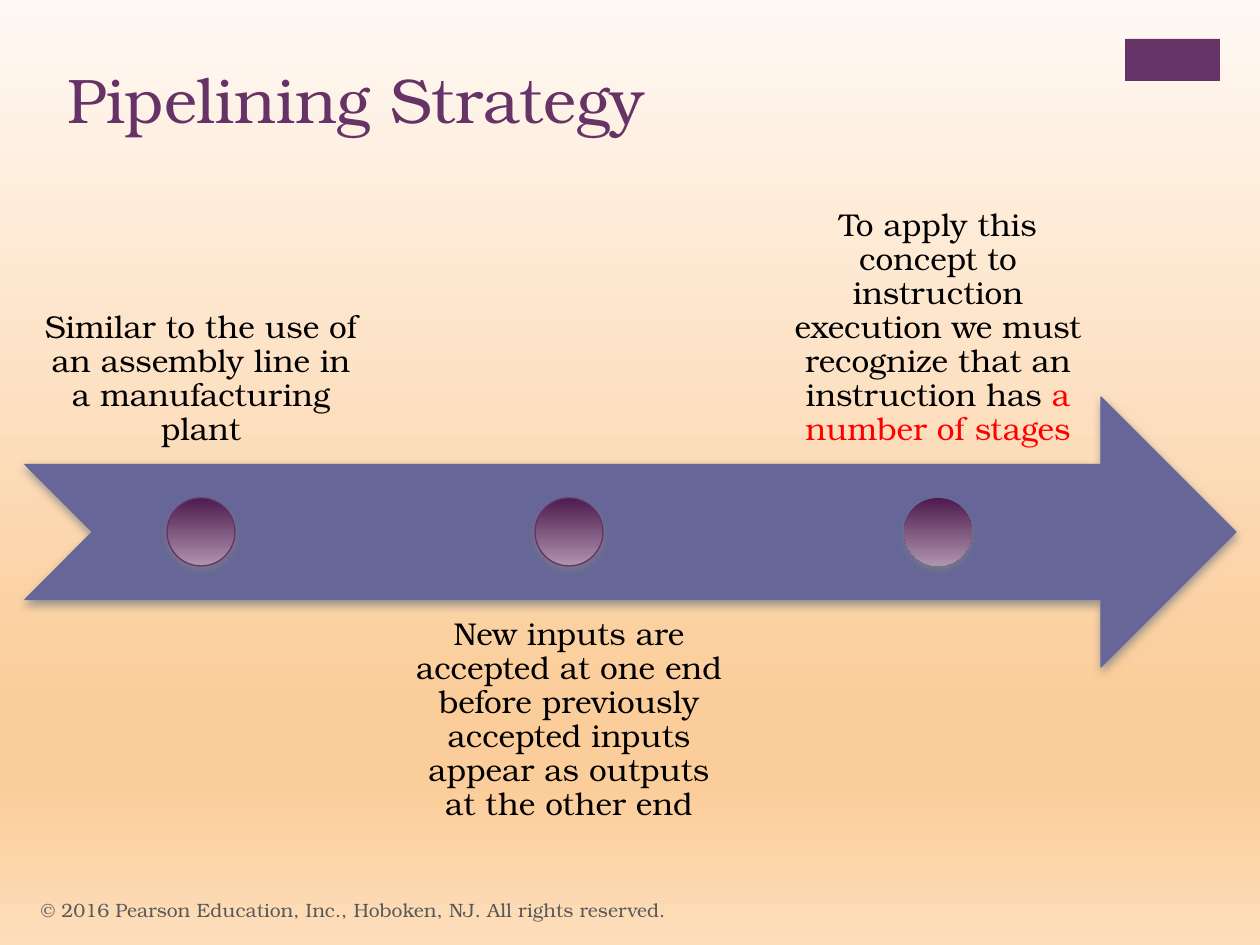
from lxml import etree
from pptx import Presentation
from pptx.dml.color import RGBColor
from pptx.enum.shapes import MSO_SHAPE as SHAPE
from pptx.enum.text import MSO_ANCHOR as ANCHOR, PP_ALIGN as ALIGN
from pptx.oxml.ns import qn
from pptx.util import Pt

PX = 914400 / 126
FONT = "TeX Gyre Bonum"
COLORS = {
    "plum": "663366", "slate": "666699", "shadow": "808080",
    "black": "000000", "red": "FF0000", "gray": "595959",
}
BACKGROUND = [(0, "FFF9F4"), (74, "FBCD9A"), (83, "FBCD9A"), (100, "FDDEBB")]
DOT = [(0, "4D1A4D"), (100, "AF94AF")]

prs = Presentation()
prs.slide_width, prs.slide_height = int(1260 * PX), int(945 * PX)
s = prs.slides.add_slide(prs.slide_layouts[6])


def add_shape(kind, box, fill, line=None, shadow=True):
    sp = s.shapes.add_shape(kind, *[int(v * PX) for v in box])
    sp.shadow.inherit = False
    if isinstance(fill, list):
        set_gradient(sp.fill, sp._element, fill)
    else:
        sp.fill.solid()
        sp.fill.fore_color.rgb = RGBColor.from_string(COLORS[fill])
    if line:
        sp.line.color.rgb = RGBColor.from_string(COLORS[line])
        sp.line.width = Pt(0.75)
    else:
        sp.line.fill.background()
    if shadow:
        effects = sp._element.spPr.find(qn("a:effectLst"))
        outer = etree.SubElement(effects, qn("a:outerShdw"), blurRad=str(Pt(5)),
                                 dist=str(Pt(2)), dir="5400000", rotWithShape="0")
        color = etree.SubElement(outer, qn("a:srgbClr"), val=COLORS["shadow"])
        etree.SubElement(color, qn("a:alpha"), val="75000")


def set_gradient(fill, element, stops):
    fill.gradient()
    fill.gradient_angle = 270
    stop_list = element.find(".//" + qn("a:gsLst"))
    for old in list(stop_list):
        stop_list.remove(old)
    for pos, color in stops:
        gs = etree.SubElement(stop_list, qn("a:gs"), pos=str(pos * 1000))
        etree.SubElement(gs, qn("a:srgbClr"), val=color)


set_gradient(s.background.fill, s._element, BACKGROUND)
add_shape(SHAPE.RECTANGLE, (1125, 39, 95, 42), "plum", shadow=False)
add_shape(SHAPE.NOTCHED_RIGHT_ARROW, (25, 397, 1211, 270), "slate", "slate")

stages = [
    (195, ANCHOR.BOTTOM, "plum", [
        ("Similar to the use of an assembly line in a manufacturing plant", "black")]),
    (600, ANCHOR.TOP, "plum", [
        ("New inputs are accepted at one end before previously accepted inputs "
         "appear as outputs at the other end", "black")]),
    (195, ANCHOR.BOTTOM, None, [
        ("To apply this concept to instruction execution we must recognize that "
         "an instruction has ", "black"),
        ("a number of stages", "red")]),
]
texts = [
    ((54, 55, 1041, 154), ANCHOR.TOP, ALIGN.LEFT, 36, (13, 6), 1,
     [("Pipelining Strategy", "plum")]),
    ((28, 885, 844, 50), ANCHOR.MIDDLE, ALIGN.LEFT, 11, (13, 6), 1,
     [("© 2016 Pearson Education, Inc., Hoboken, NJ. All rights reserved.", "gray")]),
]
for i, (top, anchor, line, runs) in enumerate(stages):
    left = 25 + i * 737 // 2
    add_shape(SHAPE.OVAL, (left + 142, 498, 68, 68), DOT, line)
    texts.append(((left, top, 352, 270), anchor, ALIGN.CENTER, 18, (18, 18), 0.9, runs))

for box, anchor, align, size, (side, edge), spacing, runs in texts:
    tf = s.shapes.add_textbox(*[int(v * PX) for v in box]).text_frame
    tf.word_wrap = True
    tf.vertical_anchor = anchor
    tf.margin_left = tf.margin_right = int(side * PX)
    tf.margin_top = tf.margin_bottom = int(edge * PX)
    p = tf.paragraphs[0]
    p.alignment = align
    p.line_spacing = spacing
    for text, color in runs:
        r = p.add_run()
        r.text = text
        r.font.name = FONT
        r.font.size = Pt(size)
        r.font.color.rgb = RGBColor.from_string(COLORS[color])

prs.save("out.pptx")
